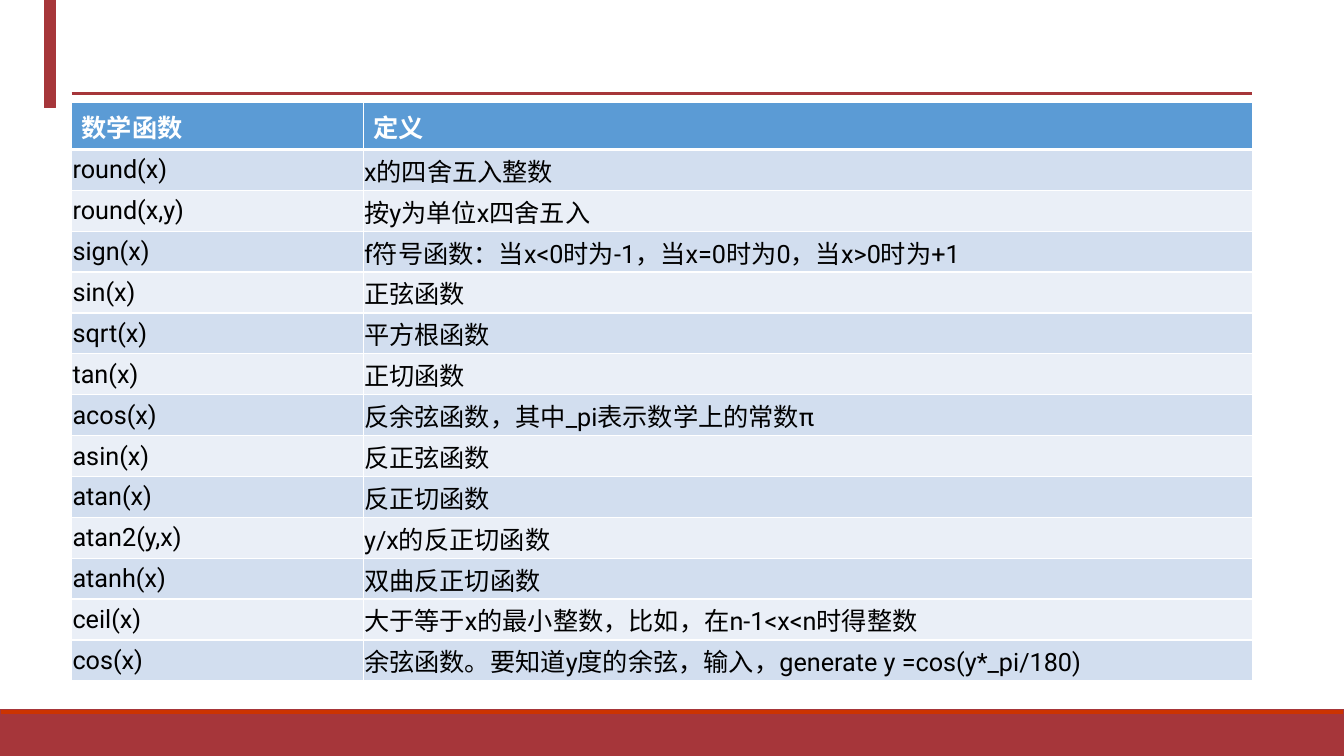
import dataclasses

import lxml.etree
import pptx
import pptx.dml.color
import pptx.enum.shapes
import pptx.enum.text
import pptx.oxml
import pptx.oxml.ns
import pptx.util


@dataclasses.dataclass(frozen=True)
class Theme:
    red: str = "A6363A"
    orange: str = "CC3300"
    white: str = "FFFFFF"
    black: str = "000000"
    header: str = "5B9BD5"
    bands: tuple = ("D2DEEF", "EAEFF7")
    font: str = "Roboto"
    text_size: int = 18
    outline: float = 1
    rule: float = 2.25
    border: int = 1
    header_border: int = 3


@dataclasses.dataclass(frozen=True)
class Box:
    left: float
    top: float
    width: float
    height: float

    def lengths(self):
        return [pptx.util.Inches(value) for value in dataclasses.astuple(self)]


THEME = Theme()
PAGE = Box(0, 0, 13.33, 7.5)
HEAD = Box(0.44, 0, 11.98, 1.07)
FOOT = Box(0, 7.04, PAGE.width, 0.47)
TABLE = Box(0.71, 1.02, 11.71, 5.68)
NAME_COLUMN_SHARE = 0.247

FUNCTIONS = [
    ("数学函数", "定义"),
    ("round(x)", "x的四舍五入整数"),
    ("round(x,y)", "按y为单位x四舍五入"),
    ("sign(x)", "f符号函数：当x<0时为-1，当x=0时为0，当x>0时为+1"),
    ("sin(x)", "正弦函数"),
    ("sqrt(x)", "平方根函数"),
    ("tan(x)", "正切函数"),
    ("acos(x)", "反余弦函数，其中_pi表示数学上的常数π"),
    ("asin(x)", "反正弦函数"),
    ("atan(x)", "反正切函数"),
    ("atan2(y,x)", "y/x的反正切函数"),
    ("atanh(x)", "双曲反正切函数"),
    ("ceil(x)", "大于等于x的最小整数，比如，在n-1<x<n时得整数"),
    ("cos(x)", "余弦函数。要知道y度的余弦，输入，generate y =cos(y*_pi/180)"),
]


def rgb(value):
    return pptx.dml.color.RGBColor.from_string(value)


def add_bar(page, box, color):
    bar = page.shapes.add_shape(pptx.enum.shapes.MSO_SHAPE.RECTANGLE, *box.lengths())
    bar.shadow.inherit = False
    bar.fill.solid()
    bar.fill.fore_color.rgb = rgb(color)
    bar.line.color.rgb = rgb(THEME.red)
    bar.line.width = pptx.util.Pt(THEME.outline)


def add_footer(page, box):
    stripe = 0.05
    add_bar(page, Box(box.left, box.top + stripe, box.width, box.height - stripe), THEME.red)
    add_bar(page, Box(box.left, box.top, box.width, stripe), THEME.orange)


def add_header(page, box):
    add_bar(page, Box(box.left, box.top, 0.11, box.height), THEME.red)
    left, right, height = (
        pptx.util.Inches(value)
        for value in (box.left + 0.27, box.left + box.width, box.top + 0.93)
    )
    rule = page.shapes.add_connector(
        pptx.enum.shapes.MSO_CONNECTOR.STRAIGHT, left, height, right, height
    )
    rule.line.color.rgb = rgb(THEME.red)
    rule.line.width = pptx.util.Pt(THEME.rule)
    lxml.etree.SubElement(rule.element.spPr, pptx.oxml.ns.qn("a:effectLst"))


def add_borders(cell, bottom_width):
    properties = cell._tc.get_or_add_tcPr()
    widths = {"lnL": THEME.border, "lnR": THEME.border, "lnT": THEME.border, "lnB": bottom_width}
    for position, (side, width) in enumerate(widths.items()):
        border = pptx.oxml.parse_xml(
            f'<a:{side} {pptx.oxml.ns.nsdecls("a")} w="{pptx.util.Pt(width)}">'
            f'<a:solidFill><a:srgbClr val="{THEME.white}"/></a:solidFill></a:{side}>'
        )
        properties.insert(position, border)


def fill_cell(cell, text, row):
    is_header = row == 0
    cell.fill.solid()
    cell.fill.fore_color.rgb = rgb(THEME.header if is_header else THEME.bands[(row - 1) % 2])
    if not is_header:
        cell.margin_left = cell.margin_right = cell.margin_top = pptx.util.Inches(0.01)
        cell.margin_bottom = 0
        cell.vertical_anchor = pptx.enum.text.MSO_ANCHOR.MIDDLE
    cell.text_frame.text = text
    for span in cell.text_frame.paragraphs[0].runs:
        span.font.name = THEME.font
        span.font.size = pptx.util.Pt(THEME.text_size)
        span.font.bold = is_header
        span.font.color.rgb = rgb(THEME.white if is_header else THEME.black)
    add_borders(cell, THEME.header_border if is_header else THEME.border)
    if row == 1:
        cell._tc.tcPr.find(pptx.oxml.ns.qn("a:lnT")).set(
            "w", str(pptx.util.Pt(THEME.header_border))
        )


def add_function_table(page, box, rows):
    table = page.shapes.add_table(len(rows), len(rows[0]), *box.lengths()).table
    name_width = box.width * NAME_COLUMN_SHARE
    for column, width in zip(table.columns, (name_width, box.width - name_width)):
        column.width = pptx.util.Inches(width)
    for row, texts in enumerate(rows):
        for column, text in enumerate(texts):
            fill_cell(table.cell(row, column), text, row)


def main():
    deck = pptx.Presentation()
    deck.slide_width = pptx.util.Inches(PAGE.width)
    deck.slide_height = pptx.util.Inches(PAGE.height)
    page = deck.slides.add_slide(deck.slide_layouts[6])
    add_footer(page, FOOT)
    add_header(page, HEAD)
    add_function_table(page, TABLE, FUNCTIONS)
    deck.save("out.pptx")


if __name__ == "__main__":
    main()
